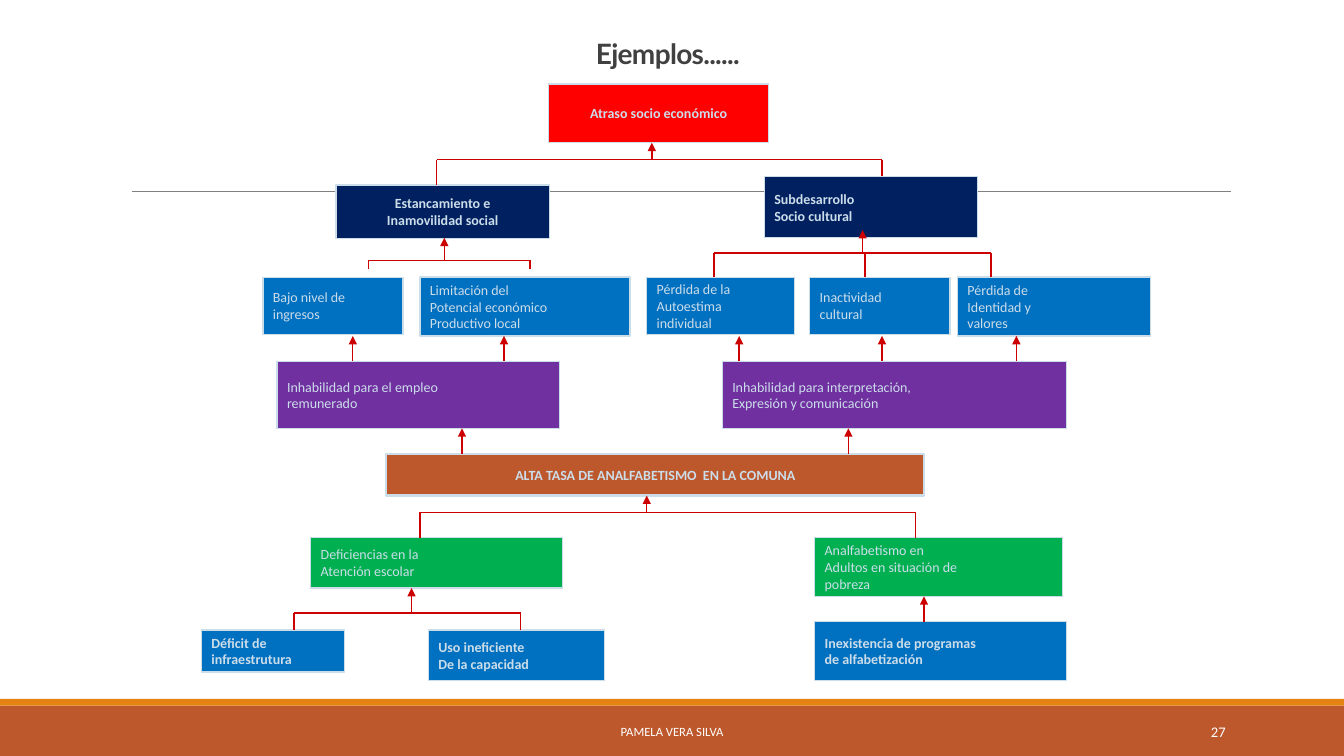
from pptx import Presentation
from pptx import util as u
from pptx.dml.color import RGBColor
from pptx.enum import shapes, text
from pptx.oxml.ns import qn
from lxml import etree

# The slide is a grid of 160 columns by 90 rows of equal cells.
COLS, ROWS = 160, 90
CELL = u.Inches(1) // 12

WHITE = RGBColor(0xFF, 0xFF, 0xFF)
PALE = RGBColor(0xCC, 0xDD, 0xEA)
DARK = RGBColor(0x40, 0x40, 0x40)
GRAY = RGBColor(0x80, 0x80, 0x80)
ORANGE = RGBColor(0xE4, 0x83, 0x12)
RUST = RGBColor(0xBD, 0x58, 0x2C)
CRIMSON = RGBColor(0xCC, 0x00, 0x00)
RED = RGBColor(0xFF, 0x00, 0x00)
NAVY = RGBColor(0x00, 0x20, 0x60)
BLUE = RGBColor(0x00, 0x70, 0xC0)
PURPLE = RGBColor(0x70, 0x30, 0xA0)
GREEN = RGBColor(0x00, 0xB0, 0x50)

LEFT, MID, RIGHT = (text.PP_ALIGN.LEFT, text.PP_ALIGN.CENTER,
                    text.PP_ALIGN.RIGHT)

# Column, row, width, height, fill, bold, alignment, lines of text
BOXES = [
    (65.3, 10, 26.2, 7, RED, True, MID, "Atraso socio económico"),
    (40, 22, 25.4, 6.4, NAVY, True, MID,
     "Estancamiento e\nInamovilidad social"),
    (91, 21, 25.4, 7.3, NAVY, True, LEFT, "Subdesarrollo\nSocio cultural"),
    (31.3, 33, 16.7, 6.8, BLUE, False, LEFT, "Bajo nivel de\ningresos"),
    (50, 33, 25, 7, BLUE, False, LEFT,
     "Limitación del\nPotencial económico\nProductivo local"),
    (77, 33, 17.6, 6.8, BLUE, False, LEFT,
     "Pérdida de la\nAutoestima\nindividual"),
    (96.4, 33, 16.7, 6.8, BLUE, False, LEFT, "Inactividad\ncultural"),
    (114, 33, 23, 7, BLUE, False, LEFT, "Pérdida de\nIdentidad y\nvalores"),
    (33, 43, 33.6, 8, PURPLE, False, LEFT,
     "Inhabilidad para el empleo\nremunerado"),
    (86, 43, 41, 8, PURPLE, False, LEFT,
     "Inhabilidad para interpretación,\nExpresión y comunicación"),
    (46, 54, 64, 5, RUST, True, MID,
     "ALTA TASA DE ANALFABETISMO  EN LA COMUNA"),
    (37, 64, 30, 6, GREEN, False, LEFT,
     "Deficiencias en la\nAtención escolar"),
    (97, 64, 29.5, 7, GREEN, False, LEFT,
     "Analfabetismo en\nAdultos en situación de\npobreza"),
    (24, 75, 17, 5, BLUE, True, LEFT, "Déficit de\ninfraestrutura"),
    (51, 75, 21, 6, BLUE, True, LEFT, "Uso ineficiente\nDe la capacidad"),
    (97, 74, 30, 7, BLUE, True, LEFT,
     "Inexistencia de programas\nde alfabetización"),
]

# Column, foot row; each arrow climbs three rows
ARROWS = [(42, 43), (60, 43), (88, 43), (105, 43), (121, 43),
          (55, 54), (101, 54), (110, 74)]

# Legs (column, foot row), row of the bar, tip (column, row)
FORKS = [
    ([(52, 22), (105, 21)], 19, (77.6, 17)),
    ([(43.9, 32), (63.1, 32)], 31, (52.9, 28.3)),
    ([(85, 33), (103, 33), (118, 33)], 30.1, (102.7, 27.4)),
    ([(50, 64), (109, 64)], 61, (77, 59)),
    ([(35, 75), (62, 75)], 73, (49, 70)),
]


def grid(*cells):
    return [u.Emu(round(cell * CELL)) for cell in cells]


def write(frame, words, align, spacing=None, **font):
    frame.word_wrap = True
    for n, line in enumerate(words.split("\n")):
        para = frame.add_paragraph() if n else frame.paragraphs[0]
        para.alignment = align
        para.line_spacing = spacing
        run = para.add_run()
        run.text = line
        look = {"name": "Calibri", "size": u.Pt(10), "bold": False} | font
        run.font.color.rgb = look.pop("color")
        for key, value in look.items():
            setattr(run.font, key, value)


def label(slide, place, words, align, anchor=text.MSO_ANCHOR.MIDDLE, **look):
    frame = slide.shapes.add_textbox(*grid(*place)).text_frame
    frame.vertical_anchor = anchor
    write(frame, words, align, **look)
    return frame


def block(slide, place, fill):
    shape = slide.shapes.add_shape(shapes.MSO_SHAPE.RECTANGLE, *grid(*place))
    shape.shadow.inherit = False
    shape.fill.solid()
    shape.fill.fore_color.rgb = fill
    shape.line.fill.background()
    return shape


def box(slide, col, row, wide, high, fill, bold, align, words):
    shape = block(slide, (col, row, wide, high), fill)
    shape.line.color.rgb = PALE
    shape.line.width = u.Pt(1.5 if fill == RUST else 1)
    shape.text_frame.vertical_anchor = text.MSO_ANCHOR.MIDDLE
    write(shape.text_frame, words, align, color=PALE, bold=bold)


def line(slide, start, end, color=CRIMSON, width=1, head=False):
    link = slide.shapes.add_connector(
        shapes.MSO_CONNECTOR.STRAIGHT, *grid(*start, *end))
    link.line.color.rgb = color
    link.line.width = u.Pt(width)
    if head:
        stroke = link.line._get_or_add_ln()
        etree.SubElement(stroke, qn("a:tailEnd"), type="triangle")
    etree.SubElement(link._element.spPr, qn("a:effectLst"))


def fork(slide, legs, bar, tip):
    """Join the legs with a bar and raise one arrow from it to the tip."""
    for col, foot in legs:
        line(slide, (col, foot), (col, bar))
    line(slide, (legs[0][0], bar), (legs[-1][0], bar))
    line(slide, (tip[0], bar), tip, head=True)


def frame_slide(slide):
    """Draw the footer bands, the rule, the footer texts and the title."""
    block(slide, (0, 84, COLS, 6), RUST)
    block(slide, (0, 83.2, COLS, 0.8), ORANGE)
    line(slide, (15.7, 22.8), (146.5, 22.8), GRAY, 0.5)
    label(slide, (48.4, 84.7, 63.2, 4.8), "PAMELA VERA SILVA", MID,
          size=u.Pt(9), color=WHITE)
    label(slide, (130, 84.7, 17.1, 4.8), "27", RIGHT,
          size=u.Pt(10.5), color=WHITE)
    title = label(slide, (23.3, 1, 112.4, 8), "Ejemplos......", MID,
                  text.MSO_ANCHOR.BOTTOM, spacing=0.85, name="Lato",
                  size=u.Pt(20), bold=True, color=DARK)
    title.paragraphs[0].runs[0].font._element.set("spc", "-50")


def main():
    deck = Presentation()
    deck.slide_width, deck.slide_height = grid(COLS, ROWS)
    slide = deck.slides.add_slide(deck.slide_layouts[6])
    frame_slide(slide)
    for item in BOXES:
        box(slide, *item)
    for col, foot in ARROWS:
        line(slide, (col, foot), (col, foot - 3), head=True)
    for item in FORKS:
        fork(slide, *item)
    deck.save("out.pptx")


if __name__ == "__main__":
    main()
